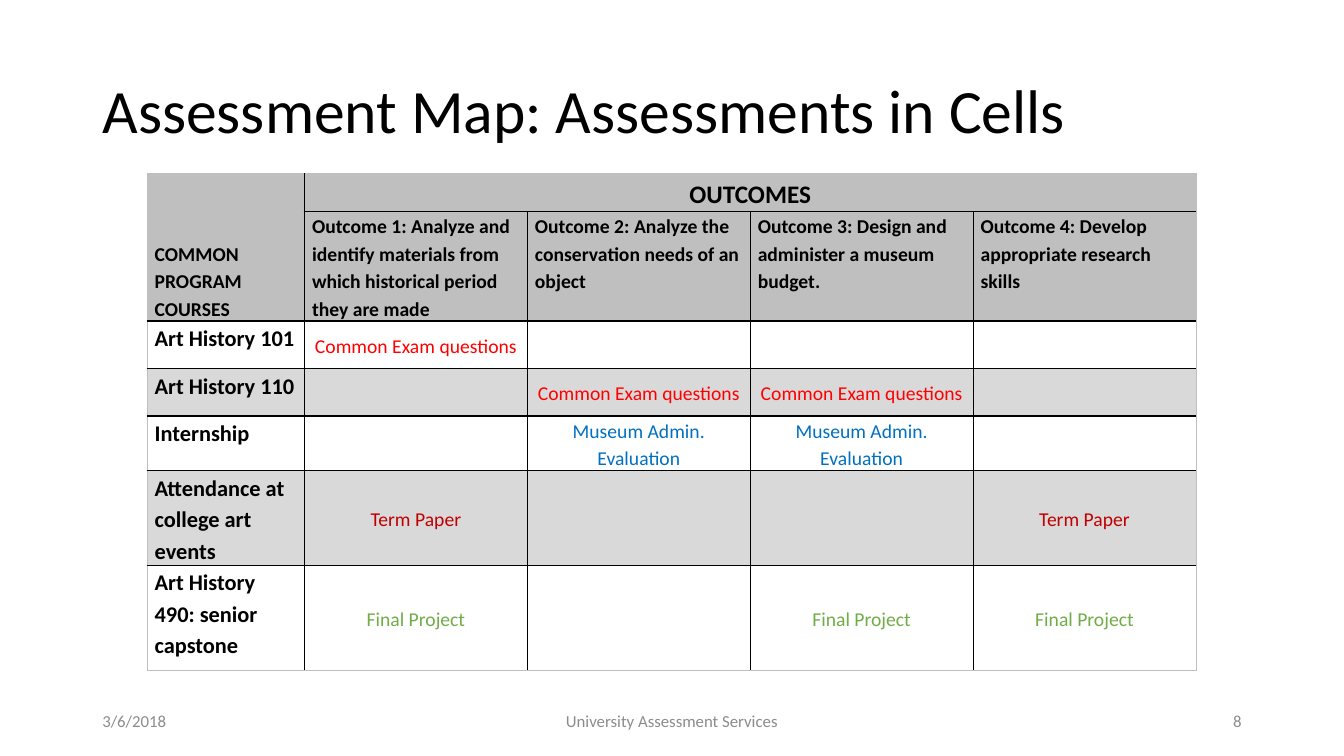
from dataclasses import dataclass

from lxml import etree
from pptx import Presentation
from pptx.dml.color import RGBColor
from pptx.enum import text as t
from pptx.oxml import ns
from pptx.util import Pt


@dataclass(frozen=True)
class Theme:
    font: str = "Calibri"
    ink: str = "000000"
    muted: str = "8C8C8C"
    header_fill: str = "BFBFBF"
    band_fill: str = "D9D9D9"
    title: int = 44
    banner: int = 18
    course: int = 16
    body: int = 14
    footer: int = 12


THEME = Theme()
LEFT, CENTER, RIGHT = t.PP_ALIGN.LEFT, t.PP_ALIGN.CENTER, t.PP_ALIGN.RIGHT
TOP, MIDDLE, BOTTOM = t.MSO_ANCHOR.TOP, t.MSO_ANCHOR.MIDDLE, t.MSO_ANCHOR.BOTTOM
NO_GRID_STYLE = "{2D5ABB26-0587-4C30-8999-92F81FD0307C}"

ASSESSMENT_COLORS = {
    "Common Exam questions": "FF0000",
    "Museum Admin. Evaluation": "0070C0",
    "Term Paper": "C00000",
    "Final Project": "70AD47",
}
OUTCOMES = [
    "Outcome 1: Analyze and identify materials from which historical period they are made",
    "Outcome 2: Analyze the conservation needs of an object",
    "Outcome 3: Design and administer a museum budget.",
    "Outcome 4: Develop appropriate research skills",
]
# Course, its assessment, and the numbers of the outcomes it assesses
COURSES = [
    ("Art History 101", "Common Exam questions", (1,)),
    ("Art History 110", "Common Exam questions", (2, 3)),
    ("Internship", "Museum Admin. Evaluation", (2, 3)),
    ("Attendance at college art events", "Term Paper", (1, 4)),
    ("Art History 490: senior capstone", "Final Project", (1, 3, 4)),
]
HEADER_ROWS = 2
ROW_HEIGHTS = [27.4, 64.8, 33.8, 33.8, 33.8, 56.9, 74.9]
COLUMN_WIDTHS = [112.4] + [159.2] * len(OUTCOMES)


def write(frame, words, size, color=THEME.ink, bold=False, align=LEFT, spacing=1.0):
    paragraph = frame.paragraphs[0]
    paragraph.alignment = align
    paragraph.line_spacing = spacing
    run = paragraph.add_run()
    run.text = words
    run.font.name = THEME.font
    run.font.size = Pt(size)
    run.font.bold = bold
    run.font.color.rgb = RGBColor.from_string(color)


def add_title(slide, words):
    title = slide.shapes.title
    title.left, title.top, title.width, title.height = Pt(66), Pt(28.8), Pt(828), Pt(104.4)
    title.text_frame.auto_size = t.MSO_AUTO_SIZE.NONE
    title.text_frame.vertical_anchor = MIDDLE
    write(title.text_frame, words, THEME.title, spacing=0.9)


def add_footer(slide, words, left, width, align):
    footer = slide.shapes.add_textbox(Pt(left), Pt(500.5), Pt(width), Pt(28.8))
    footer.text_frame.word_wrap = True
    footer.text_frame.vertical_anchor = MIDDLE
    write(footer.text_frame, words, THEME.footer, THEME.muted, align=align)


def edge_line(boundary, last, heavy):
    """Return colour and width of the grid line with this number."""
    if boundary in (0, last):
        return THEME.header_fill, 0.75
    return THEME.ink, 1.5 if boundary == heavy else 1


def draw_borders(cell, row, column):
    end_row, end_column = row + cell.span_height, column + cell.span_width
    last_row, last_column = len(ROW_HEIGHTS), len(COLUMN_WIDTHS)
    edges = {
        "lnL": edge_line(column, last_column, 1),
        "lnR": edge_line(end_column, last_column, 1),
        "lnT": edge_line(row, last_row, HEADER_ROWS),
        "lnB": edge_line(end_row, last_row, HEADER_ROWS),
    }
    properties = cell._tc.get_or_add_tcPr()
    for side, (color, width) in edges.items():
        line = etree.SubElement(properties, ns.qn("a:" + side), w=str(Pt(width)))
        fill = etree.SubElement(line, ns.qn("a:solidFill"))
        etree.SubElement(fill, ns.qn("a:srgbClr"), val=color)


def style_cell(cell, row, column):
    cell.margin_left = cell.margin_right = Pt(5.4)
    cell.margin_top = cell.margin_bottom = 0
    if not cell.is_spanned:
        draw_borders(cell, row, column)
    if row < HEADER_ROWS:
        cell.fill.solid()
        cell.fill.fore_color.rgb = RGBColor.from_string(THEME.header_fill)
    elif row % 2:
        cell.fill.solid()
        cell.fill.fore_color.rgb = RGBColor.from_string(THEME.band_fill)
    else:
        cell.fill.background()


def fill_cell(cell, words, size=THEME.body, color=THEME.ink, bold=True, align=LEFT, anchor=TOP):
    cell.vertical_anchor = anchor
    write(cell.text_frame, words, size, color, bold, align, spacing=1.15)


def add_assessment_map(slide):
    frame = slide.shapes.add_table(
        len(ROW_HEIGHTS), len(COLUMN_WIDTHS),
        Pt(105.1), Pt(123.8), Pt(sum(COLUMN_WIDTHS)), Pt(352),
    )
    table = frame.table
    table.first_row = table.horz_banding = False
    table._tbl.tblPr.find(ns.qn("a:tableStyleId")).text = NO_GRID_STYLE
    for column, width in zip(table.columns, COLUMN_WIDTHS):
        column.width = Pt(width)
    for row, height in zip(table.rows, ROW_HEIGHTS):
        row.height = Pt(height)
    frame.height = Pt(352)

    table.cell(0, 0).merge(table.cell(HEADER_ROWS - 1, 0))
    table.cell(0, 1).merge(table.cell(0, len(OUTCOMES)))
    for row in range(len(ROW_HEIGHTS)):
        for column in range(len(COLUMN_WIDTHS)):
            style_cell(table.cell(row, column), row, column)

    fill_cell(table.cell(0, 0), "COMMON PROGRAM COURSES", anchor=BOTTOM)
    fill_cell(table.cell(0, 1), "OUTCOMES", THEME.banner, align=CENTER, anchor=MIDDLE)
    for column, outcome in enumerate(OUTCOMES, 1):
        fill_cell(table.cell(1, column), outcome)
    for row, (course, assessment, outcomes) in enumerate(COURSES, HEADER_ROWS):
        fill_cell(table.cell(row, 0), course, THEME.course)
        for column in outcomes:
            fill_cell(table.cell(row, column), assessment, color=ASSESSMENT_COLORS[assessment],
                      bold=False, align=CENTER, anchor=MIDDLE)


def main():
    deck = Presentation()
    deck.slide_width, deck.slide_height = Pt(960), Pt(540)
    slide = deck.slides.add_slide(deck.slide_layouts.get_by_name("Title Only"))
    add_title(slide, "Assessment Map: Assessments in Cells")
    add_assessment_map(slide)
    add_footer(slide, "3/6/2018", 66, 216, LEFT)
    add_footer(slide, "University Assessment Services", 318, 324, CENTER)
    add_footer(slide, "8", 678, 216, RIGHT)
    deck.save("out.pptx")


if __name__ == "__main__":
    main()
